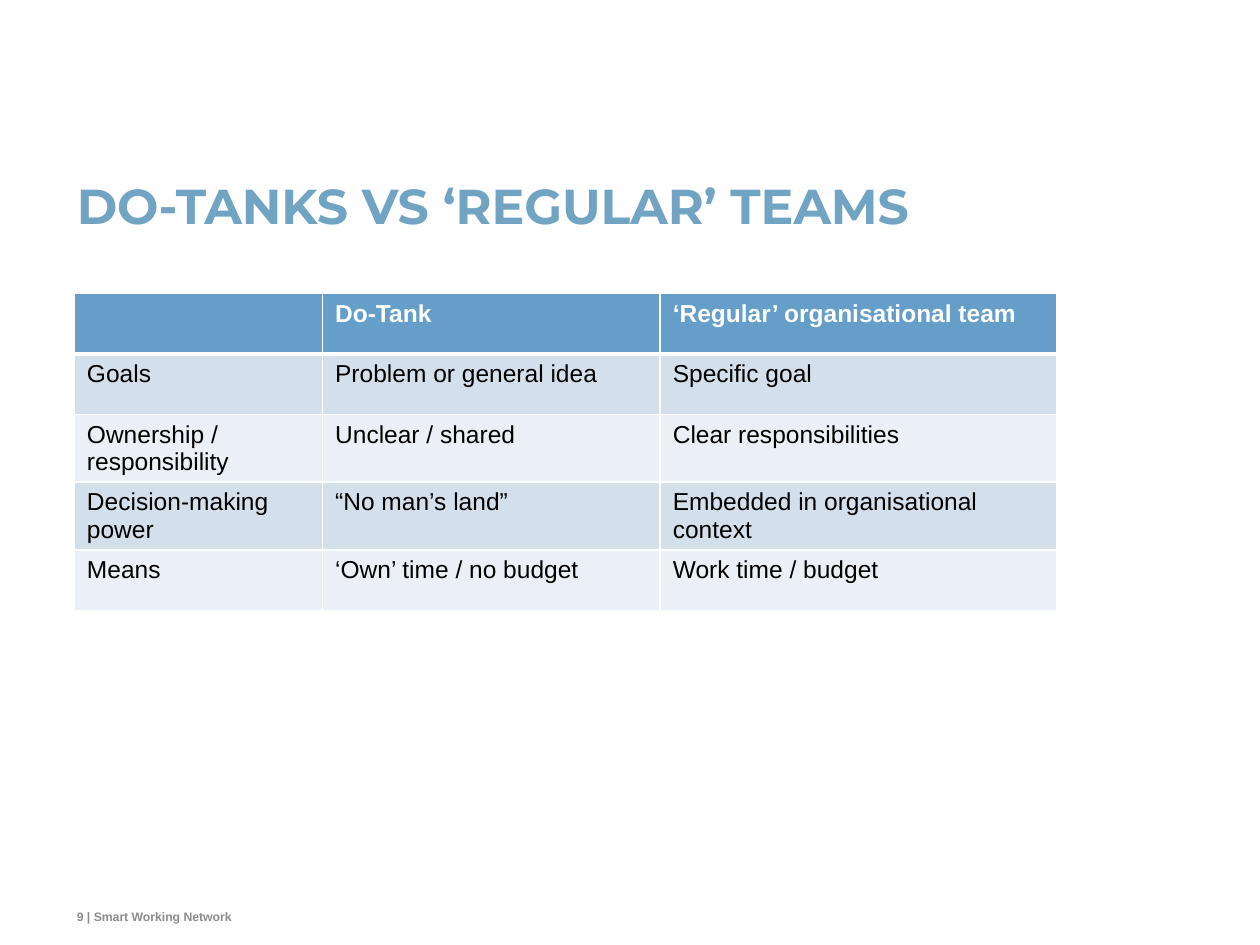
from lxml import etree
from pptx import Presentation
from pptx import util as u
from pptx.dml.color import RGBColor
from pptx.enum import text
from pptx.oxml import ns

WHITE = RGBColor(0xFF, 0xFF, 0xFF)
BLACK = RGBColor(0, 0, 0)
TITLE_BLUE = RGBColor(0x71, 0xA4, 0xC3)
HEADER_BLUE = RGBColor(0x64, 0x9E, 0xC9)
BANDS = (RGBColor(0xD3, 0xDF, 0xEB), RGBColor(0xEA, 0xF0, 0xF5))
FOOTER_GREY = RGBColor(0x8C, 0x8C, 0x8C)

WIDTH, HEIGHT = 10, 7.5
LEFT = 0.61
COLUMNS = (1.97, 2.68, 3.15)
ROW_HEIGHT = 0.48
ROWS = (
    ("", "Do-Tank", "‘Regular’ organisational team"),
    ("Goals", "Problem or general idea", "Specific goal"),
    ("Ownership / responsibility", "Unclear / shared", "Clear responsibilities"),
    ("Decision-making power", "“No man’s land”", "Embedded in organisational context"),
    ("Means", "‘Own’ time / no budget", "Work time / budget"),
)


def set_font(p, name, size, color, bold):
    p.font.name, p.font.size, p.font.bold = name, u.Pt(size), bold
    p.font.color.rgb = color


def fill_frame(sp, wording, anchor):
    """Write one left-aligned paragraph in a frame without margins."""
    tf = sp.text_frame
    tf.word_wrap = True
    tf.auto_size = text.MSO_AUTO_SIZE.NONE
    tf.vertical_anchor = anchor
    tf.margin_left = tf.margin_top = tf.margin_right = tf.margin_bottom = 0
    tf.text = wording
    p = tf.paragraphs[0]
    p.alignment = text.PP_ALIGN.LEFT
    return p


def add_title(s, box):
    sp = s.shapes.title
    sp.left, sp.top, sp.width, sp.height = map(u.Inches, box)
    p = fill_frame(sp, "DO-TANKS VS ‘REGULAR’ TEAMS", text.MSO_ANCHOR.TOP)
    p.line_spacing = u.Pt(28)
    set_font(p, "Montserrat", 28, TITLE_BLUE, True)


def add_footer(s, box):
    sp = s.shapes.add_textbox(*map(u.Inches, box))
    p = fill_frame(sp, "9 | Smart Working Network", text.MSO_ANCHOR.BOTTOM)
    set_font(p, "Arial", 7, FOOTER_GREY, True)


def set_borders(cell, top, bottom):
    """Draw white cell borders; top and bottom widths are in points."""
    tc_pr = cell._tc.get_or_add_tcPr()
    for i, (side, width) in enumerate((("L", 1), ("R", 1), ("T", top), ("B", bottom))):
        ln = etree.Element(ns.qn(f"a:ln{side}"), w=str(u.Pt(width)))
        fill = etree.SubElement(ln, ns.qn("a:solidFill"))
        etree.SubElement(fill, ns.qn("a:srgbClr"), val=str(WHITE))
        tc_pr.insert(i, ln)


def add_comparison(s, box):
    table = s.shapes.add_table(len(ROWS), len(COLUMNS), *map(u.Inches, box)).table
    for column, width in zip(table.columns, COLUMNS):
        column.width = u.Inches(width)
    for i, wording in enumerate(ROWS):
        table.rows[i].height = u.Inches(ROW_HEIGHT)
        header = i == 0
        for cell, words in zip(table.rows[i].cells, wording):
            cell.text = words
            set_font(cell.text_frame.paragraphs[0], "Arial", 14,
                     WHITE if header else BLACK, header)
            cell.fill.solid()
            cell.fill.fore_color.rgb = HEADER_BLUE if header else BANDS[(i - 1) % 2]
            set_borders(cell, top=3 if i == 1 else 1, bottom=3 if header else 1)


def main():
    prs = Presentation()
    prs.slide_width, prs.slide_height = u.Inches(WIDTH), u.Inches(HEIGHT)
    s = prs.slides.add_slide(prs.slide_layouts[5])
    add_title(s, (LEFT, 1.47, 8.81, 0.79))
    add_footer(s, (LEFT, 7.14, 4.72, 0.19))
    add_comparison(s, (0.59, 2.33, sum(COLUMNS), ROW_HEIGHT * len(ROWS)))
    prs.save("out.pptx")


if __name__ == "__main__":
    main()
